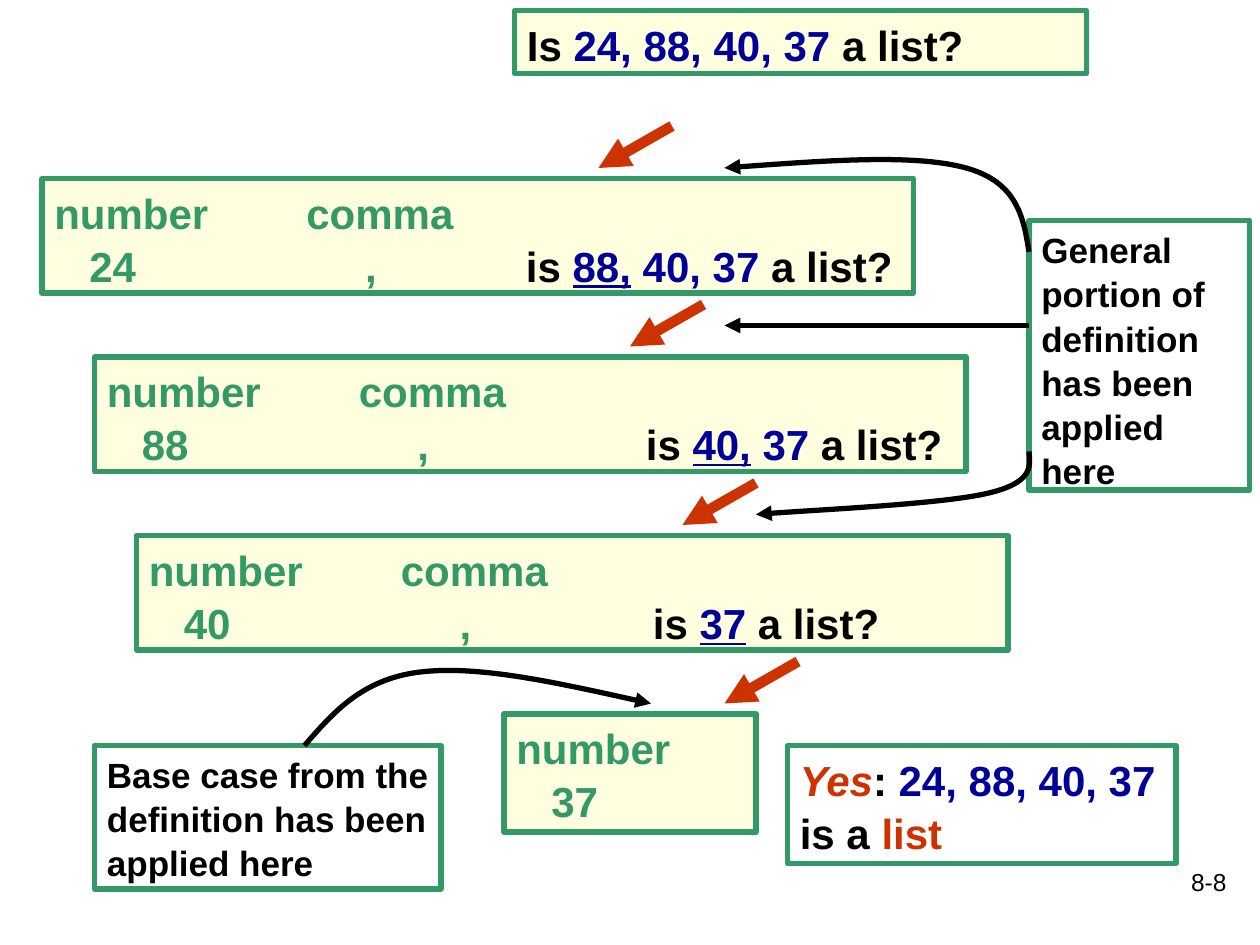
from dataclasses import dataclass

from lxml.etree import SubElement
from pptx import Presentation
from pptx.dml.color import RGBColor
from pptx.enum.shapes import MSO_CONNECTOR, MSO_SHAPE
from pptx.enum.text import MSO_ANCHOR, PP_ALIGN
from pptx.oxml.ns import qn
from pptx.util import Pt


@dataclass(frozen=True)
class Theme:
    font: str = "Arial"
    black: RGBColor = RGBColor(0x00, 0x00, 0x00)
    green: RGBColor = RGBColor(0x33, 0x99, 0x66)
    blue: RGBColor = RGBColor(0x00, 0x00, 0x99)
    red: RGBColor = RGBColor(0xCC, 0x33, 0x00)
    cream: RGBColor = RGBColor(0xFF, 0xFF, 0xDF)
    body: int = 24
    note: int = 20
    footer: int = 14
    line: int = 3
    step_line: int = 6
    spacing: float = 1.05


THEME = Theme()
LABEL_TABS = [144]
VALUE_INDENT, COMMA_TAB = 20, 177.5


def add_tab_stops(paragraph, positions):
    tab_list = SubElement(paragraph._p.get_or_add_pPr(), qn("a:tabLst"))
    for position in positions:
        SubElement(tab_list, qn("a:tab"), pos=str(Pt(position)), algn="l")


def write_runs(paragraph, runs, size):
    """Each run is (text, colour) or (text, colour, name of a font switch)."""
    for text, color, *switches in runs:
        run = paragraph.add_run()
        run.text = text
        font = run.font
        font.name, font.size, font.bold = THEME.font, Pt(size), True
        font.color.rgb = color
        for switch in switches:
            setattr(font, switch, True)


def add_box(slide, bounds, lines, fill=None, size=THEME.body):
    """Each line is a pair of runs and tab stops."""
    shape = slide.shapes.add_shape(MSO_SHAPE.RECTANGLE, *map(Pt, bounds))
    shape.shadow.inherit = False
    if fill is None:
        shape.fill.background()
    else:
        shape.fill.solid()
        shape.fill.fore_color.rgb = fill
    shape.line.color.rgb = THEME.green
    shape.line.width = Pt(THEME.line)
    text_frame = shape.text_frame
    text_frame.word_wrap = True
    text_frame.vertical_anchor = MSO_ANCHOR.TOP
    for index, (runs, tabs) in enumerate(lines):
        paragraph = text_frame.add_paragraph() if index else text_frame.paragraphs[0]
        paragraph.alignment = PP_ALIGN.LEFT
        paragraph.line_spacing = THEME.spacing
        if tabs:
            add_tab_stops(paragraph, tabs)
        write_runs(paragraph, runs, size)


def add_list_step(slide, left, top, number, question, question_tab):
    lines = [
        ([("number\tcomma", THEME.green)], LABEL_TABS),
        ([(f"\t{number}\t,\t", THEME.green), ("is ", THEME.black), *question,
          ("a list?", THEME.black)], [VALUE_INDENT, COMMA_TAB, question_tab]),
    ]
    add_box(slide, (left, top, 498, 65.5), lines, THEME.cream)


def add_note(slide, bounds, text):
    add_box(slide, bounds, [([(text, THEME.black)], [])], size=THEME.note)


def style_arrow(shape, color, width):
    shape.line.color.rgb = color
    shape.line.width = Pt(width)
    SubElement(shape.line._get_or_add_ln(), qn("a:tailEnd"), type="triangle")


def add_arrow(slide, start, end, color, width):
    connector = slide.shapes.add_connector(
        MSO_CONNECTOR.STRAIGHT, *map(Pt, (*start, *end)))
    style_arrow(connector, color, width)
    SubElement(connector._element.spPr, qn("a:effectLst"))


def add_curved_arrow(slide, start, *controls):
    """Draw Bezier curves; every three control points make one curve."""
    builder = slide.shapes.build_freeform(Pt(start[0]), Pt(start[1]))
    builder.add_line_segments([(Pt(x), Pt(y)) for x, y in controls], close=False)
    shape = builder.convert_to_shape()
    shape.shadow.inherit = False
    shape.fill.background()
    style_arrow(shape, THEME.black, THEME.line)
    segments = list(shape._element.iter(qn("a:lnTo")))
    outline = segments[0].getparent()
    for first in range(0, len(segments), 3):
        curve = SubElement(outline, qn("a:cubicBezTo"))
        for segment in segments[first:first + 3]:
            curve.append(segment[0])
            outline.remove(segment)


def add_page_number(slide, text):
    text_box = slide.shapes.add_textbox(Pt(558), Pt(492), Pt(150), Pt(36))
    text_box.text_frame.word_wrap = True
    paragraph = text_box.text_frame.paragraphs[0]
    paragraph.text = text
    paragraph.alignment = PP_ALIGN.RIGHT
    font = paragraph.runs[0].font
    font.name, font.size = THEME.font, Pt(THEME.footer)
    font.color.rgb = THEME.black


def main():
    presentation = Presentation()
    presentation.slide_width, presentation.slide_height = Pt(720), Pt(540)
    slide = presentation.slides.add_slide(presentation.slide_layouts[6])
    black, blue, green, red = THEME.black, THEME.blue, THEME.green, THEME.red

    add_page_number(slide, "8-8")
    add_box(slide, (294, 6, 327, 36),
            [([("Is ", black), ("24, 88, 40, 37 ", blue), ("a list?", black)], [])],
            THEME.cream)

    step_pitch = 102
    steps = [
        (24, "24", [("88,", blue, "underline"), (" 40, 37 ", blue)], 269.5),
        (54, "88", [("40,", blue, "underline"), (" 37 ", blue)], 308),
        (78, "40", [("37", blue, "underline"), (" ", blue)], 288),
    ]
    for index, (left, number, question, question_tab) in enumerate(steps):
        add_list_step(slide, left, 102 + index * step_pitch,
                      number, question, question_tab)
    add_box(slide, (288, 408, 144, 67.5),
            [([("number", green)], []), ([("\t37", green)], [VALUE_INDENT])],
            THEME.cream)

    for index, tip in enumerate((342, 360, 390, 414)):
        top = 72 + index * step_pitch
        add_arrow(slide, (tip + 42, top), (tip, top + 24), red, THEME.step_line)

    add_note(slide, (54, 426, 198, 82),
             "Base case from the definition has been applied here")
    add_note(slide, (588, 126, 126, 154),
             "General portion of definition has been applied here")
    add_box(slide, (450, 426, 222, 67.5),
            [([("Yes", red, "italic"), (": ", black), ("24, 88, 40, 37", blue),
               (" is a ", black), ("list", red)], [])])

    add_curved_arrow(slide, (174, 426), (190.5, 407), (207, 388), (240, 384),
                     (273, 380), (322.5, 391), (372, 402))
    add_curved_arrow(slide, (588, 144), (585, 124), (581, 104), (552, 96),
                     (523, 88), (468.5, 92), (414, 96))
    add_arrow(slide, (588, 186), (414, 186), black, THEME.line)
    add_curved_arrow(slide, (588, 258), (589, 267), (590, 276), (564, 282),
                     (538, 288), (454, 292), (432, 294))

    presentation.save("out.pptx")


if __name__ == "__main__":
    main()
